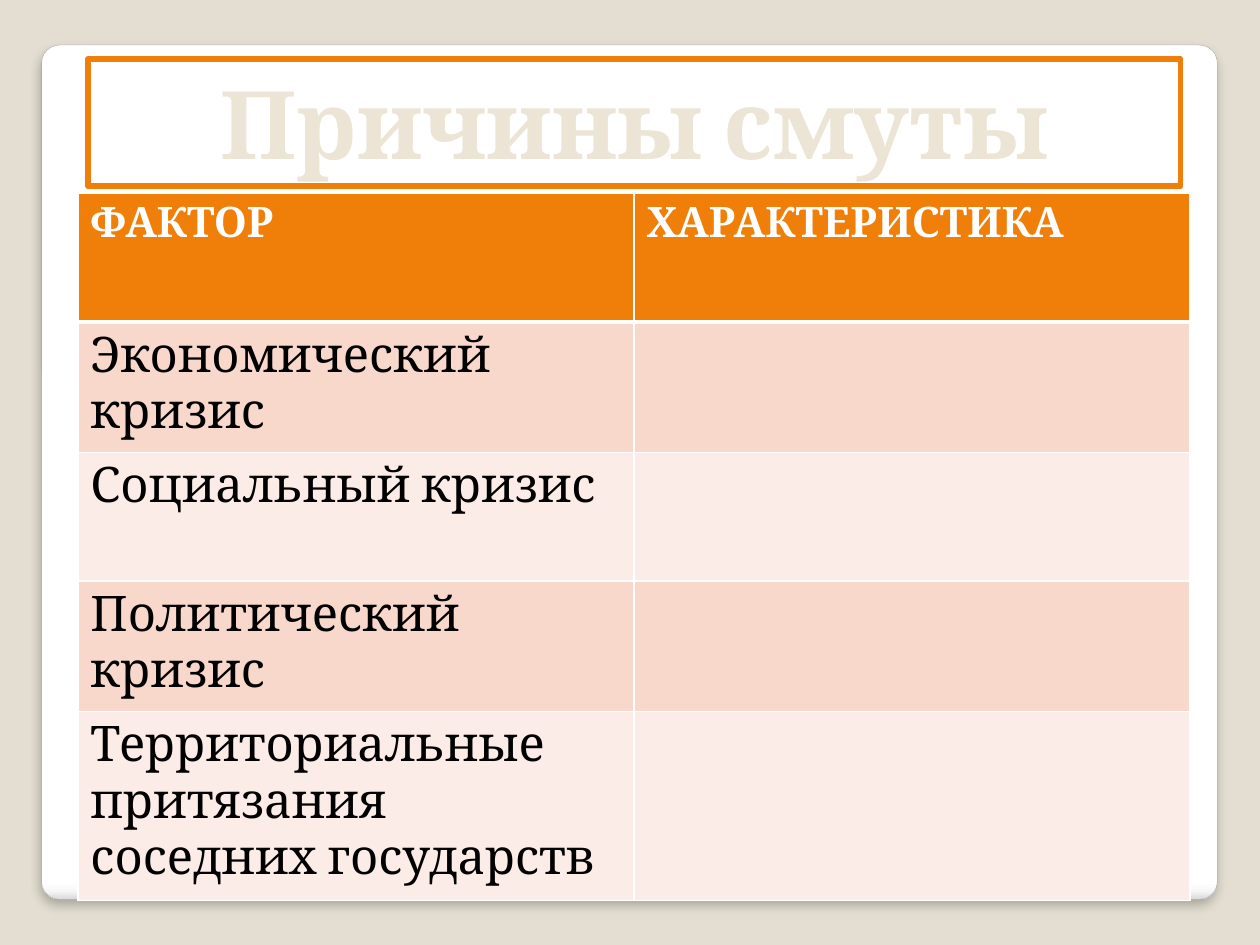
from lxml import etree
from pptx import Presentation
from pptx.dml.color import RGBColor
from pptx.enum.shapes import MSO_SHAPE as SHAPE
from pptx.enum.text import MSO_AUTO_SIZE as AUTO, MSO_ANCHOR as ANCHOR, PP_ALIGN as ALIGN
from pptx.oxml import parse_xml
from pptx.oxml.ns import nsdecls, qn
from pptx.util import Cm, Pt

FONT = "Cambria"
ORANGE, WHITE = "F07F09", "FFFFFF"
BANDS = ("F9D8CC", "FCECE7")
HEADERS = ("ФАКТОР", "ХАРАКТЕРИСТИКА")
FACTORS = (
    "Экономический кризис",
    "Социальный кризис",
    "Политический кризис",
    "Территориальные притязания соседних государств",
)


def rgb(color):
    return RGBColor.from_string(color)


def set_font(font, size, color, bold):
    font.name = FONT
    font.size = Pt(size)
    font.bold = bold
    font.color.rgb = rgb(color)


def line_xml(tag, color, width):
    return parse_xml(
        f'<a:{tag} {nsdecls("a")} w="{Pt(width)}"><a:solidFill>'
        f'<a:srgbClr val="{color}"/></a:solidFill></a:{tag}>')


def add_box(slide, shape, box, line, width):
    sp = slide.shapes.add_shape(shape, *map(Cm, box))
    sp.shadow.inherit = False
    sp.fill.solid()
    sp.fill.fore_color.rgb = rgb(WHITE)
    sp.line.color.rgb = rgb(line)
    sp.line.width = Pt(width)
    return sp


def add_card(slide, box):
    """Rounded white panel with a shaded lower edge and a soft shadow."""
    sp = add_box(slide, SHAPE.ROUNDED_RECTANGLE, box, "A4A4A4", 0.16)
    sp.adjustments[0] = 0.021
    stops = ((0, WHITE), (98, WHITE), (99, "F7F7F7"), (100, "DADADA"))
    gs = "".join(f'<a:gs pos="{pos * 1000}"><a:srgbClr val="{color}"/></a:gs>'
                 for pos, color in stops)
    pr = sp._element.spPr
    pr.replace(pr.find(qn("a:solidFill")), parse_xml(
        f'<a:gradFill {nsdecls("a")} rotWithShape="1"><a:gsLst>{gs}</a:gsLst>'
        '<a:lin ang="5400000" scaled="0"/></a:gradFill>'))
    shadow = etree.SubElement(
        pr.find(qn("a:effectLst")), qn("a:outerShdw"), blurRad=str(Pt(6)),
        dist=str(Pt(4)), dir="5400000", algn="tl", rotWithShape="0")
    color = etree.SubElement(shadow, qn("a:srgbClr"), val="000000")
    etree.SubElement(color, qn("a:alpha"), val="25000")


def add_title(slide, box, text):
    sp = add_box(slide, SHAPE.RECTANGLE, box, ORANGE, 3.35)
    tf = sp.text_frame
    tf.text = text
    tf.word_wrap = True
    tf.auto_size = AUTO.SHAPE_TO_FIT_TEXT
    tf.vertical_anchor = ANCHOR.TOP
    p = tf.paragraphs[0]
    p.alignment = ALIGN.CENTER
    r = p.runs[0]
    set_font(r.font, 54, "ECE5D5", True)
    r._r.get_or_add_rPr().insert(0, line_xml("ln", "323232", 1))


def style_cell(cell, fill, size, color, bold, bottom):
    cell.fill.solid()
    cell.fill.fore_color.rgb = rgb(fill)
    set_font(cell.text_frame.paragraphs[0].font, size, color, bold)
    for r in cell.text_frame.paragraphs[0].runs:
        set_font(r.font, size, color, bold)
    pr = cell._tc.get_or_add_tcPr()
    for i, (tag, width) in enumerate(
            (("lnL", 1), ("lnR", 1), ("lnT", 1), ("lnB", bottom))):
        pr.insert(i, line_xml(tag, WHITE, width))


def add_factor_table(slide, box, row_heights):
    rows = [HEADERS] + [(factor, "") for factor in FACTORS]
    table = slide.shapes.add_table(len(rows), len(HEADERS), *map(Cm, box)).table
    for col in table.columns:
        col.width = Cm(box[2] / len(HEADERS))
    for i, (texts, height) in enumerate(zip(rows, row_heights)):
        table.rows[i].height = Cm(height)
        for cell, text in zip(table.rows[i].cells, texts):
            cell.text = text
            if i == 0:
                style_cell(cell, ORANGE, 24, WHITE, True, 3)
            else:
                style_cell(cell, BANDS[(i - 1) % 2], 28, "000000", False, 1)


def main():
    prs = Presentation()
    prs.slide_width, prs.slide_height = Cm(25.4), Cm(19.05)
    slide = prs.slides.add_slide(prs.slide_layouts[6])
    slide.background.fill.solid()
    slide.background.fill.fore_color.rgb = rgb("E3DED1")
    add_card(slide, (0.84, 0.91, 23.7, 17.22))
    add_title(slide, (1.78, 1.19, 22.02, 2.57), "Причины смуты")
    heights = [2.6] * 4 + [3.63]
    add_factor_table(slide, (1.57, 3.89, 22.42, sum(heights)), heights)
    prs.save("out.pptx")


if __name__ == "__main__":
    main()
